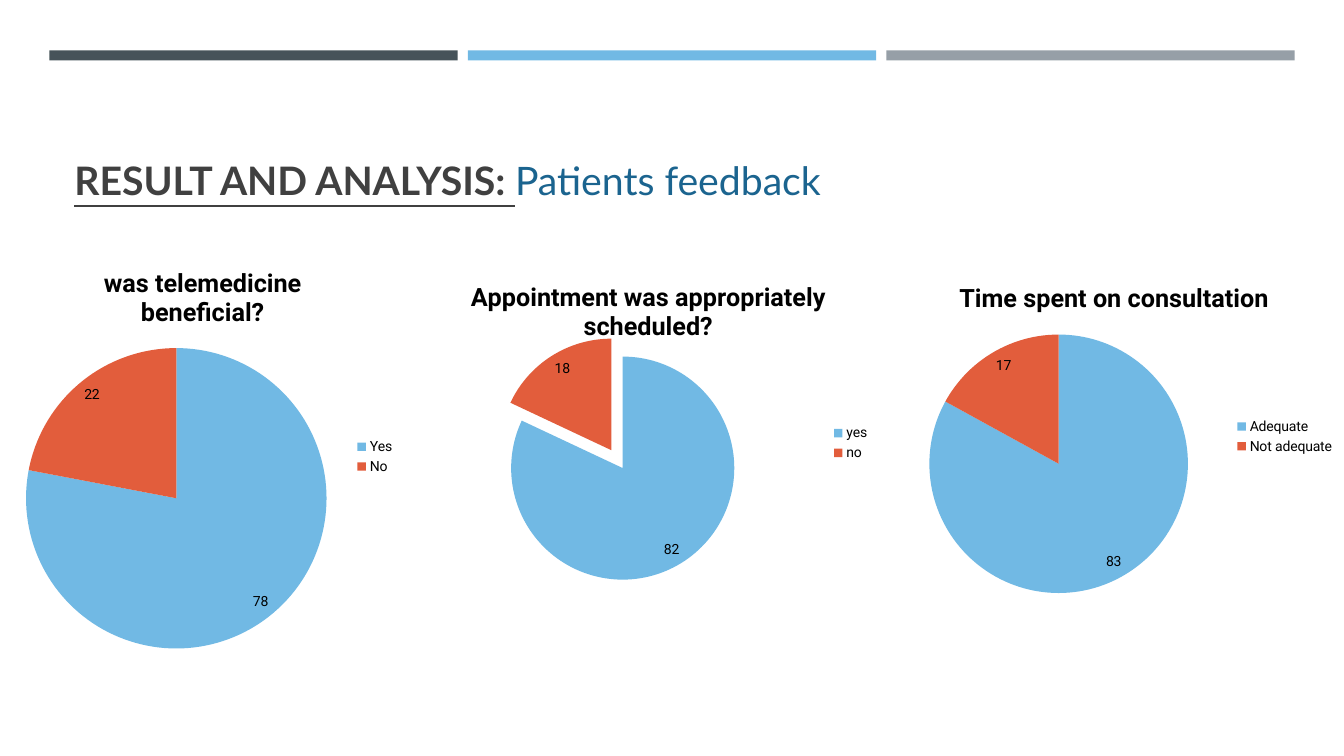
from lxml import etree
from pptx import Presentation
from pptx.chart.data import CategoryChartData
from pptx.dml.color import RGBColor
from pptx.enum.chart import XL_CHART_TYPE, XL_LABEL_POSITION, XL_LEGEND_POSITION
from pptx.enum.shapes import MSO_SHAPE
from pptx.enum.text import MSO_ANCHOR
from pptx.oxml import parse_xml
from pptx.oxml.ns import nsdecls, qn
from pptx.util import Inches, Pt

PIE = XL_CHART_TYPE.PIE
INSIDE = XL_LABEL_POSITION.INSIDE_END
RIGHT = XL_LEGEND_POSITION.RIGHT
RECT = MSO_SHAPE.RECTANGLE
BOTTOM = MSO_ANCHOR.BOTTOM

COLORS = {
    "slate": "465359",
    "sky": "71B9E4",
    "gray": "969FA7",
    "red": "E25D3C",
    "dark": "404040",
    "blue": "1B648F",
    "black": "000000",
}
PIES = [
    ("was telemedicine beneficial?", ("Yes", "No"), (78, 22),
     (0, 2.46, 4.02, 4.14), (0.06, 0.24, 0.75, 0.72), 0),
    ("Appointment was appropriately scheduled?", ("yes", "no"), (82, 18),
     (4.13, 2.61, 4.6, 3.57), (0.09, 0.26, 0.71, 0.62), 19),
    ("Time spent on consultation", ("Adequate", "Not adequate"), (83, 17),
     (8.76, 2.63, 4.58, 3.4), (0.1, 0.2, 0.56, 0.76), 0),
]


def color(name):
    """Return the named colour."""
    return RGBColor.from_string(COLORS[name])


def style(font, size, name, face, bold=False):
    """Set the look of a font."""
    font.size = Pt(size)
    font.name = face
    font.bold = bold
    font.color.rgb = color(name)


def add_bar(slide, left, name):
    """Draw one bar of the top band."""
    bar = slide.shapes.add_shape(RECT, Inches(left), Inches(0.5), Inches(4.05), Inches(0.1))
    bar.shadow.inherit = False
    bar.fill.solid()
    bar.fill.fore_color.rgb = color(name)
    bar.line.fill.background()


def add_title(slide):
    """Write the two-part heading."""
    box = slide.shapes.add_textbox(Inches(0.64), Inches(0.77), Inches(12.06), Inches(1.3))
    frame = box.text_frame
    frame.word_wrap = True
    frame.vertical_anchor = BOTTOM
    line = frame.paragraphs[0]
    for text, name, strong in (("RESULT AND ANALYSIS: ", "dark", True),
                               ("Patients feedback", "blue", False)):
        run = line.add_run()
        run.text = text
        style(run.font, 28, name, "Lato", strong)
        run.font.underline = strong


def set_plot(chart, area):
    """Place the inner plot area by fractions of the chart."""
    plot = chart.plots[0]._element.getparent()
    for old in plot.findall(qn("c:layout")):
        plot.remove(old)
    layout = parse_xml(f"<c:layout {nsdecls('c')}><c:manualLayout/></c:layout>")
    parts = [("layoutTarget", "inner"), ("xMode", "edge"), ("yMode", "edge")]
    parts += zip("xywh", area)
    for tag, val in parts:
        etree.SubElement(layout[0], qn(f"c:{tag}")).set("val", str(val))
    plot.insert(0, layout)


def explode(series, index, amount):
    """Pull one slice away from the centre."""
    for point in series._element.findall(qn("c:dPt")):
        if point.find(qn("c:idx")).get("val") == str(index):
            push = parse_xml(f'<c:explosion {nsdecls("c")} val="{amount}"/>')
            point.find(qn("c:spPr")).addprevious(push)


def add_pie(slide, title, cats, vals, box, area, push):
    """Draw one titled pie with its legend and value labels."""
    data = CategoryChartData()
    data.categories = cats
    data.add_series(title, vals)
    chart = slide.shapes.add_chart(PIE, *map(Inches, box), data).chart
    style(chart.font, 10, "black", "Roboto")
    chart.has_title = True
    chart.chart_title.text_frame.text = title
    run = chart.chart_title.text_frame.paragraphs[0].runs[0]
    style(run.font, 18, "black", "Roboto", True)
    chart.chart_title.include_in_layout = False
    chart.has_legend = True
    chart.legend.position = RIGHT
    chart.legend.include_in_layout = False
    plot = chart.plots[0]
    plot.vary_by_categories = True
    series = plot.series[0]
    for index, name in enumerate(("sky", "red")):
        fill = series.points[index].format.fill
        fill.solid()
        fill.fore_color.rgb = color(name)
    if push:
        explode(series, 1, push)
    labels = series.data_labels
    labels.show_value = True
    labels.position = INSIDE
    style(labels.font, 10, "black", "Roboto")
    set_plot(chart, area)


def main():
    """Build the slide and save it."""
    deck = Presentation()
    deck.slide_width = Inches(13.33)
    deck.slide_height = Inches(7.5)
    slide = deck.slides.add_slide(deck.slide_layouts[6])
    for index, name in enumerate(("slate", "sky", "gray")):
        add_bar(slide, 0.49 + 4.15 * index, name)
    add_title(slide)
    for pie in PIES:
        add_pie(slide, *pie)
    deck.save("out.pptx")


if __name__ == "__main__":
    main()
